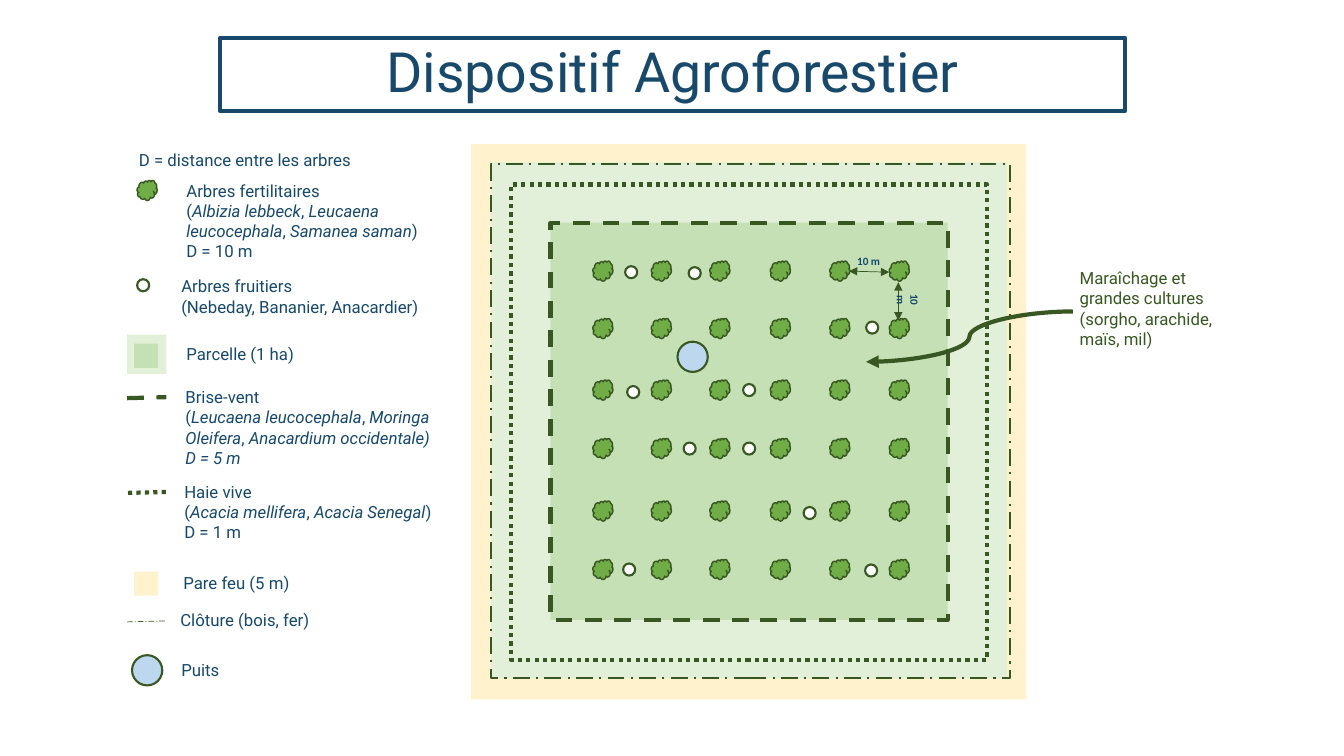
"""Build the agroforestry layout slide: a plot plan with its legend."""
from dataclasses import dataclass
from itertools import product

from lxml import etree
from pptx import Presentation
from pptx import util as u
from pptx.dml import color as dml
from pptx.enum import dml as lines, shapes, text
from pptx.oxml import ns
from pptx.shapes import shapetree as tree

COLORS = {
    "navy": "18496A",
    "forest": "385723",
    "leaf": "70AD47",
    "field": "C5E0B4",
    "margin": "E2F0D9",
    "sand": "FFF2CC",
    "water": "BDD7EE",
    "white": "FFFFFF",
}
RECT = shapes.MSO_SHAPE.RECTANGLE
OVAL = shapes.MSO_SHAPE.OVAL
CLOUD = shapes.MSO_SHAPE.CLOUD
STRAIGHT = shapes.MSO_CONNECTOR.STRAIGHT
CURVE = shapes.MSO_CONNECTOR.CURVE
DASH = lines.MSO_LINE.DASH
DOT = lines.MSO_LINE.ROUND_DOT
DASH_DOT = lines.MSO_LINE.LONG_DASH_DOT
CENTER = text.PP_ALIGN.CENTER


@dataclass(frozen=True)
class Style:
    """Look of a closed shape."""
    kind: shapes.MSO_SHAPE
    fill: str | None = None
    weight: float = 0
    dash: lines.MSO_LINE | None = None


@dataclass(frozen=True)
class Mark:
    """A styled shape at a place, in inches."""
    style: Style
    left: float
    top: float
    width: float
    height: float


@dataclass(frozen=True)
class Link:
    """A connector between two points, in inches."""
    begin: tuple[float, float]
    end: tuple[float, float]
    weight: float
    dash: lines.MSO_LINE | None = None
    kind: shapes.MSO_CONNECTOR = STRAIGHT
    arrows: tuple[str, ...] = ()


@dataclass(frozen=True)
class Label:
    """A text box; asterisks enclose italic words."""
    left: float
    top: float
    width: float
    height: float
    paragraphs: tuple[str, ...]
    color: str = "navy"
    font: str = "Roboto"
    size: float = 12
    bold: bool = False
    align: text.PP_ALIGN | None = None
    vertical: bool = False


TREE = Style(CLOUD, "leaf", 1)
FRUIT_TREE = Style(OVAL, "white", 1.5)
WELL = Style(OVAL, "water", 1.5)
FIREBREAK = Style(RECT, "sand")
MARGIN = Style(RECT, "margin")
FIELD = Style(RECT, "field")
TREE_SIZE, FRUIT_SIZE, WELL_SIZE = 0.2, 0.12, 0.3

PLOT = [
    Mark(FIREBREAK, 4.67, 1.43, 5.51, 5.51),
    Mark(MARGIN, 4.87, 1.61, 5.12, 5.12),
    Mark(FIELD, 5.46, 2.21, 3.94, 3.94),
    Mark(Style(RECT, None, 3, DOT), 5.07, 1.83, 4.72, 4.72),
    Mark(Style(RECT, None, 3, DASH), 5.46, 2.21, 3.94, 3.94),
    Mark(Style(RECT, None, 1.5, DASH_DOT), 4.87, 1.63, 5.15, 5.1),
]
TREE_ROWS = (2.59, 3.16, 3.77, 4.35, 4.97, 5.55)
TREE_COLUMNS = (5.88, 6.46, 7.04, 7.64, 8.23, 8.82)
FRUIT_TREES = [
    (6.2, 2.64), (6.83, 2.65), (8.59, 3.19), (6.22, 3.83), (7.37, 3.81),
    (6.78, 4.39), (7.37, 4.39), (7.97, 5.03), (6.18, 5.59), (8.58, 5.6),
]
WELLS = [(6.72, 3.39), (1.31, 6.5)]
LEGEND_TREE = (1.36, 1.79)
LEGEND_FRUIT_TREE = (1.36, 2.77)
LEGEND_PLOT = [Mark(MARGIN, 1.26, 3.32, 0.39, 0.39), Mark(FIELD, 1.33, 3.41, 0.24, 0.24)]
LEGEND_FIREBREAK = Mark(FIREBREAK, 1.33, 5.67, 0.24, 0.24)

BOTH_ENDS = ("headEnd", "tailEnd")
LINKS = [
    Link((1.26, 3.95), (1.65, 3.94), 3, DASH),
    Link((1.27, 4.89), (1.66, 4.88), 3, DOT),
    Link((1.26, 6.17), (1.65, 6.16), 0.5, DASH_DOT),
    Link((8.42, 2.69), (8.82, 2.7), 0.5, arrows=BOTH_ENDS),
    Link((8.91, 2.8), (8.91, 3.18), 0.5, arrows=BOTH_ENDS),
    Link((10.64, 3.09), (8.59, 3.59), 3, kind=CURVE, arrows=("tailEnd",)),
]
LABELS = [
    Label(1.28, 1.44, 2.46, 0.3, ("D = distance entre les arbres",)),
    Label(1.75, 1.74, 2.94, 0.91, (
        "Arbres fertilitaires",
        "(*Albizia lebbeck*, *Leucaena leucocephala*, *Samanea saman*)",
        "D = 10 m")),
    Label(1.7, 2.69, 2.97, 0.5, ("Arbres fruitiers", "(Nebeday, Bananier, Anacardier)")),
    Label(1.75, 3.36, 1.75, 0.3, ("Parcelle (1 ha)",)),
    Label(1.74, 3.79, 2.92, 0.91, (
        "Brise-vent",
        "(*Leucaena leucocephala*, *Moringa Oleifera*, *Anacardium occidentale)*",
        "*D = 5 m*")),
    Label(1.73, 4.73, 2.96, 0.71, (
        "Haie vive", "(*Acacia mellifera*, *Acacia Senegal*)", "D = 1 m")),
    Label(1.72, 5.63, 1.75, 0.3, ("Pare feu (5 m)",)),
    Label(1.69, 6, 1.75, 0.3, ("Clôture (bois, fer)",)),
    Label(1.7, 6.5, 1.75, 0.3, ("Puits",)),
    Label(8.32, 2.47, 0.59, 0.24, ("10 m",), font="Calibri", size=8, bold=True, align=CENTER),
    Label(8.85, 2.8, 0.34, 0.35, ("10 m",), font="Calibri", size=8, bold=True, align=CENTER,
          vertical=True),
    Label(10.61, 2.61, 1.75, 0.91, (
        "Maraîchage et grandes cultures (sorgho, arachide, maïs, mil)",), "forest"),
]


def rgb(name: str) -> dml.RGBColor:
    """Return the named colour."""
    return dml.RGBColor.from_string(COLORS[name])


def draw_mark(target: tree.SlideShapes | tree.GroupShapes, mark: Mark) -> None:
    """Draw one closed shape."""
    box = map(u.Inches, (mark.left, mark.top, mark.width, mark.height))
    shape = target.add_shape(mark.style.kind, *box)
    shape.shadow.inherit = False
    if mark.style.fill:
        shape.fill.solid()
        shape.fill.fore_color.rgb = rgb(mark.style.fill)
    else:
        shape.fill.background()
    if mark.style.weight:
        shape.line.color.rgb = rgb("forest")
        shape.line.width = u.Pt(mark.style.weight)
        shape.line.dash_style = mark.style.dash
    else:
        shape.line.fill.background()


def draw_link(target: tree.SlideShapes, link: Link) -> None:
    """Draw one connector with its arrowheads."""
    connector = target.add_connector(link.kind, *map(u.Inches, link.begin + link.end))
    connector.line.color.rgb = rgb("forest")
    connector.line.width = u.Pt(link.weight)
    connector.line.dash_style = link.dash
    properties = connector.element.spPr
    for arrow in link.arrows:
        etree.SubElement(properties.find(ns.qn("a:ln")), ns.qn(f"a:{arrow}"), type="triangle")
    etree.SubElement(properties, ns.qn("a:effectLst"))


def draw_label(target: tree.SlideShapes, label: Label) -> None:
    """Draw one text box run by run."""
    box = map(u.Inches, (label.left, label.top, label.width, label.height))
    shape = target.add_textbox(*box)
    frame = shape.text_frame
    frame.word_wrap = True
    frame.auto_size = text.MSO_AUTO_SIZE.SHAPE_TO_FIT_TEXT
    if label.vertical:
        shape.element.txBody.bodyPr.set("vert", "vert")
    for index, line in enumerate(label.paragraphs):
        paragraph = frame.add_paragraph() if index else frame.paragraphs[0]
        paragraph.alignment = label.align
        for position, words in enumerate(line.split("*")):
            if words:
                run = paragraph.add_run()
                run.text = words
                run.font.name, run.font.size = label.font, u.Pt(label.size)
                run.font.bold, run.font.italic = label.bold, position % 2 == 1
                run.font.color.rgb = rgb(label.color)


def format_title(title: tree.SlidePlaceholder) -> None:
    """Move, outline and fill the title placeholder."""
    title.left, title.top, title.width, title.height = map(u.Inches, (2.18, 0.38, 8.98, 0.72))
    title.line.color.rgb = rgb("navy")
    title.line.width = u.Pt(3)
    title.text_frame.vertical_anchor = text.MSO_ANCHOR.MIDDLE
    paragraph = title.text_frame.paragraphs[0]
    paragraph.alignment, paragraph.line_spacing = CENTER, 0.9
    run = paragraph.add_run()
    run.text = "Dispositif Agroforestier"
    run.font.name, run.font.size = "Roboto", u.Pt(39.6)
    run.font.color.rgb = rgb("navy")


def main() -> None:
    """Build and save the presentation."""
    presentation = Presentation()
    presentation.slide_width, presentation.slide_height = u.Inches(13.33), u.Inches(7.5)
    slide = presentation.slides.add_slide(presentation.slide_layouts[5])
    format_title(slide.shapes.title)
    trees = [*product(TREE_COLUMNS, TREE_ROWS), LEGEND_TREE]
    marks = [*PLOT, LEGEND_FIREBREAK]
    for style, size, places in ((TREE, TREE_SIZE, trees),
                                (FRUIT_TREE, FRUIT_SIZE, [*FRUIT_TREES, LEGEND_FRUIT_TREE]),
                                (WELL, WELL_SIZE, WELLS)):
        marks += [Mark(style, left, top, size, size) for left, top in places]
    for mark in marks:
        draw_mark(slide.shapes, mark)
    legend_plot = slide.shapes.add_group_shape()
    for mark in LEGEND_PLOT:
        draw_mark(legend_plot.shapes, mark)
    for link in LINKS:
        draw_link(slide.shapes, link)
    for label in LABELS:
        draw_label(slide.shapes, label)
    presentation.save("out.pptx")


if __name__ == "__main__":
    main()
